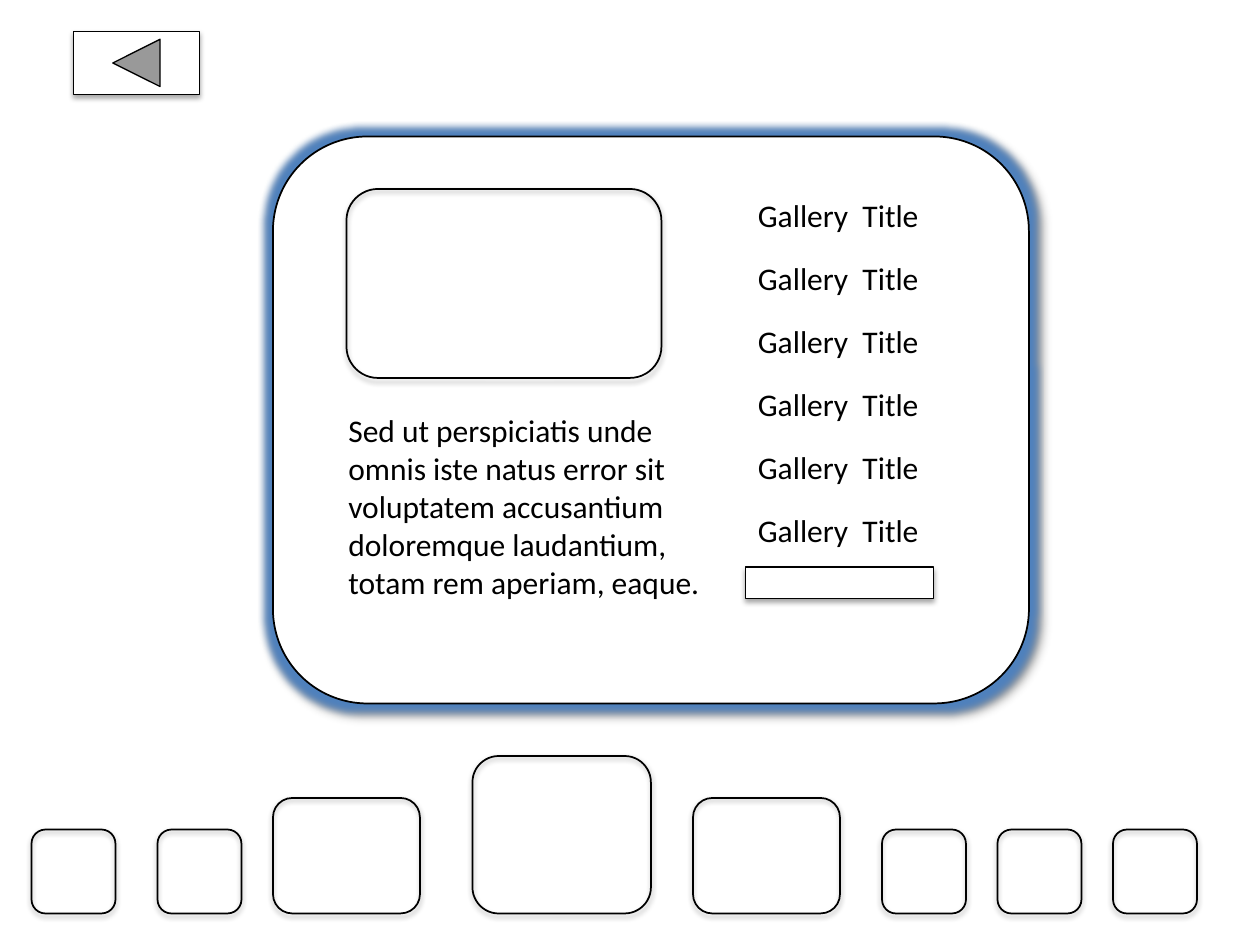
from lxml import etree
from pptx import Presentation
from pptx import util as u
from pptx.dml.color import RGBColor
from pptx.enum import shapes, text
from pptx.oxml.ns import qn

PX = 7620  # EMU, 120 px to the inch
BLACK, WHITE, BLUE = "000000", "FFFFFF", "4F81BD"
SHAPE = shapes.MSO_SHAPE
SOFT = (35, 3.1, 1.8, 90)  # opacity %, blur pt, distance pt, angle
DEEP = (43, 4, 3, 45)


def px(*lengths):
    return [u.Emu(length * PX) for length in lengths]


def rgb(value):
    return RGBColor.from_string(value)


class Page:
    """Holds the style and the current slide."""
    font, size = "Calibri", 18

    def __init__(self, deck):
        self.slide = deck.slides.add_slide(deck.slide_layouts[6])

    def add_effect(self, shape, tag, colour, opacity, **attributes):
        effects = shape._element.spPr.find(qn("a:effectLst"))
        effect = etree.SubElement(effects, qn(f"a:{tag}"))
        for name, value in attributes.items():
            effect.set(name, str(value))
        tint = etree.SubElement(effect, qn("a:srgbClr"), val=colour)
        etree.SubElement(tint, qn("a:alpha"), val=str(opacity * 1000))

    def outline(self, kind, left, top, width, height,
                fill=None, line=1, shadow=SOFT, glow=None):
        shape = self.slide.shapes.add_shape(kind, *px(left, top, width, height))
        if fill:
            shape.fill.solid()
            shape.fill.fore_color.rgb = rgb(fill)
        else:
            shape.fill.background()
        shape.line.color.rgb = rgb(BLACK)
        shape.line.width = u.Pt(line)
        shape.shadow.inherit = False
        if glow:
            self.add_effect(shape, "glow", BLUE, 100, rad=u.Pt(glow))
        opacity, blur, distance, angle = shadow
        self.add_effect(shape, "outerShdw", BLACK, opacity, blurRad=u.Pt(blur),
                        dist=u.Pt(distance), dir=angle * 60000, rotWithShape=0)
        return shape

    def label(self, words, left, top, width, height, wrap=False):
        box = self.slide.shapes.add_textbox(*px(left, top, width, height))
        frame = box.text_frame
        frame.text = words
        frame.word_wrap = wrap
        frame.auto_size = text.MSO_AUTO_SIZE.SHAPE_TO_FIT_TEXT
        for span in frame.paragraphs[0].runs:
            span.font.name = self.font
            span.font.size = u.Pt(self.size)
            span.font.color.rgb = rgb(BLACK)
        return box


def main():
    deck = Presentation()
    deck.slide_width, deck.slide_height = px(1200, 900)
    page = Page(deck)

    page.outline(SHAPE.ROUNDED_RECTANGLE, 260, 130, 720, 540,
                 fill=WHITE, shadow=DEEP, glow=8)

    floor = 870
    thumbnails = [(30, 80, 80), (150, 80, 80), (260, 140, 110), (450, 170, 150),
                  (660, 140, 110), (840, 80, 80), (950, 80, 80), (1060, 80, 80)]
    for left, width, height in thumbnails:
        page.outline(SHAPE.ROUNDED_RECTANGLE, left, floor - height, width, height)

    page.outline(SHAPE.ACTION_BUTTON_BACK_OR_PREVIOUS, 70, 30, 120, 60,
                 fill=WHITE, line=0.75)

    page.label("Sed ut perspiciatis unde omnis iste natus error sit voluptatem "
               "accusantium doloremque laudantium, totam rem aperiam, eaque.",
               320, 386, 370, 194, wrap=True)
    page.outline(SHAPE.ROUNDED_RECTANGLE, 330, 180, 300, 180)

    menu_left, menu_width = 710, 179
    for row in range(6):
        page.label("Gallery  Title", menu_left, 181 + 60 * row, menu_width, 48)
    page.outline(SHAPE.ACTION_BUTTON_CUSTOM, menu_left, 540, menu_width, 30,
                 fill=WHITE, line=0.75)

    deck.save("out.pptx")


if __name__ == "__main__":
    main()
